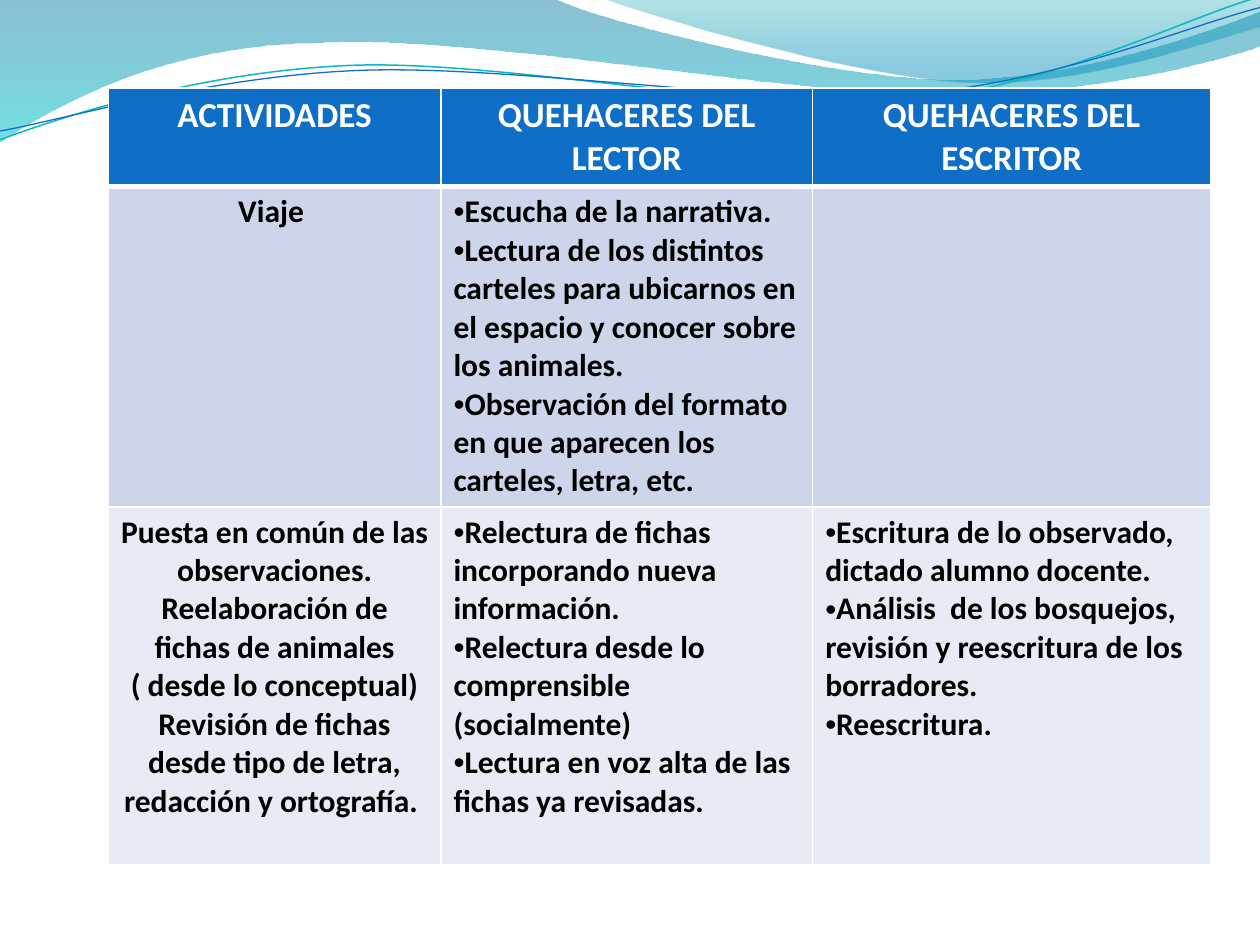
import pptx
import pptx.util
import pptx.dml.color
import pptx.enum.text
import pptx.oxml.ns
from lxml import etree

Inches = pptx.util.Inches
Pt = pptx.util.Pt
RGBColor = pptx.dml.color.RGBColor
qn = pptx.oxml.ns.qn

WHITE = RGBColor(0xFF, 0xFF, 0xFF)
BLACK = RGBColor(0, 0, 0)
BLUE = RGBColor(0x0F, 0x6F, 0xC6)
TEAL = RGBColor(0x0A, 0xB8, 0xBF)
DEEP_BLUE = RGBColor(0x00, 0x74, 0xA1)
CYAN = RGBColor(0x00, 0xC6, 0xCF)
SEA_GREEN = RGBColor(0x00, 0xA1, 0xA9)
SKY_BLUE = RGBColor(0x00, 0x8B, 0xBF)
BAND_DARK = RGBColor(0xCC, 0xD5, 0xEA)
BAND_LIGHT = RGBColor(0xE7, 0xEB, 0xF5)

BROAD_WAVE = [
    (0, -0.01), (4.4, -0.01),
    (4.76, 0.17, 6.64, 0.63, 7.58, 0.63),
    (8.53, 0.63, 9.58, 0.26, 10, 0.09),
    (10.01, 0.36),
    (9.83, 0.44, 8.7, 0.76, 7.46, 0.75),
    (6.22, 0.75, 3.82, 0.28, 2.57, 0.34),
    (1.29, 0.35, 0.46, 0.83, -0.01, 1.13),
]
RIGHT_WAVE = [
    (4.79, -0.01),
    (5.09, 0.11, 6.82, 0.62, 7.69, 0.65),
    (8.56, 0.69, 9.61, 0.32, 10, 0.21),
    (10, 0),
]
TEAL_STRAND = [
    (0, 1.11),
    (0.48, 0.93, 1.58, 0.57, 2.77, 0.52),
    (3.95, 0.47, 5.93, 0.89, 7.13, 0.8),
    (8.33, 0.71, 9.38, 0.15, 9.98, -0.02),
]
BLUE_STRAND = [
    (0, 1.04),
    (0.47, 0.96, 1.64, 0.61, 2.83, 0.56),
    (4.03, 0.51, 5.97, 0.83, 7.17, 0.75),
    (8.36, 0.67, 9.41, 0.21, 10, 0.06),
]

HEADINGS = ["ACTIVIDADES", "QUEHACERES DEL LECTOR", "QUEHACERES DEL ESCRITOR"]
ACTIVITIES = [
    [
        ["Viaje "],
        [
            "Escucha de la narrativa.",
            "Lectura de los distintos carteles para ubicarnos en el espacio y conocer sobre los animales.",
            "Observación del formato en que aparecen los carteles, letra, etc.",
        ],
        [],
    ],
    [
        [
            "Puesta en común de las observaciones.",
            "Reelaboración de fichas de animales ( desde lo conceptual)",
            "Revisión de fichas desde tipo de letra, redacción y ortografía. ",
        ],
        [
            "Relectura de fichas incorporando nueva información.",
            "Relectura desde lo comprensible (socialmente)",
            "Lectura en voz alta de las fichas ya revisadas.",
        ],
        [
            "Escritura de lo observado, dictado alumno docente.",
            "Análisis  de los bosquejos, revisión y reescritura de los borradores.",
            "Reescritura.",
        ],
    ],
]


class SlideBuilder:
    font = "Calibri"

    def __init__(self, slide):
        self.slide = slide

    def outline(self, segments, closed):
        anchors = [(Inches(s[-2]), Inches(s[-1])) for s in segments]
        builder = self.slide.shapes.build_freeform(*anchors[0], scale=1.0)
        builder.add_line_segments(anchors[1:], close=closed)
        shape = builder.convert_to_shape()
        shape.shadow.inherit = False
        left, top = builder.shape_offset_x, builder.shape_offset_y
        lines = list(shape._element.spPr.iter(qn("a:lnTo")))
        for line, segment in zip(lines, segments[1:]):
            if len(segment) == 6:
                curve = etree.Element(qn("a:cubicBezTo"))
                for x, y in zip(segment[::2], segment[1::2]):
                    etree.SubElement(curve, qn("a:pt"),
                                     x=str(Inches(x) - left), y=str(Inches(y) - top))
                line.getparent().replace(line, curve)
        return shape

    def wave(self, segments, stops):
        wave = self.outline(segments, True)
        wave.line.fill.background()
        wave.fill.gradient()
        wave.fill.gradient_angle = 270
        for stop, (position, color, _) in zip(wave.fill.gradient_stops, stops):
            stop.position = position
            stop.color.rgb = color
        colors = wave._element.spPr.iter(qn("a:srgbClr"))
        for color_element, (_, _, opacity) in zip(colors, stops):
            etree.SubElement(color_element, qn("a:alpha"), val=str(opacity * 1000))

    def strand(self, segments, color, width):
        strand = self.outline(segments, False)
        strand.fill.background()
        strand.line.color.rgb = color
        strand.line.width = Pt(width)

    def table(self, left, top, widths, heights):
        table = self.slide.shapes.add_table(
            len(heights), len(widths), Inches(left), Inches(top),
            Inches(sum(widths)), Inches(sum(heights))).table
        for column, width in zip(table.columns, widths):
            column.width = Inches(width)
        for row, height in zip(table.rows, heights):
            row.height = Inches(height)
        return table

    def border(self, side, width):
        line = etree.Element(qn("a:" + side), w=str(Pt(width)))
        fill = etree.SubElement(line, qn("a:solidFill"))
        etree.SubElement(fill, qn("a:srgbClr"), val=str(WHITE))
        return line

    def cell(self, cell, lines, fill, color, size, bulleted=False, top=1, bottom=1):
        cell.fill.solid()
        cell.fill.fore_color.rgb = fill
        sides = [("lnL", 1), ("lnR", 1), ("lnT", top), ("lnB", bottom)]
        for place, (side, width) in enumerate(sides):
            cell._tc.tcPr.insert(place, self.border(side, width))
        cell.text_frame.text = "\n".join(lines)
        for paragraph in cell.text_frame.paragraphs:
            if bulleted and lines:
                properties = paragraph._p.get_or_add_pPr()
                properties.set("marL", "0")
                properties.set("indent", "0")
                etree.SubElement(properties, qn("a:buFont"), typeface="Arial")
                etree.SubElement(properties, qn("a:buChar"), char="•")
            elif not bulleted:
                paragraph.alignment = pptx.enum.text.PP_ALIGN.CENTER
            for run in paragraph.runs:
                run.font.name = self.font
                run.font.size = Pt(size)
                run.font.bold = True
                run.font.color.rgb = color


def main():
    presentation = pptx.Presentation()
    presentation.slide_width = Inches(10)
    presentation.slide_height = Inches(7.5)
    builder = SlideBuilder(presentation.slides.add_slide(presentation.slide_layouts[6]))

    builder.wave(BROAD_WAVE, [(0, DEEP_BLUE, 45), (1, CYAN, 55)])
    builder.wave(RIGHT_WAVE, [(0, SEA_GREEN, 30), (0.8, SKY_BLUE, 45)])
    builder.strand(TEAL_STRAND, TEAL, 0.85)
    builder.strand(BLUE_STRAND, BLUE, 0.75)

    plan = builder.table(0.86, 0.7, [2.64, 2.95, 3.16], [0.77, 2.54, 2.84])
    for column, heading in enumerate(HEADINGS):
        builder.cell(plan.cell(0, column), [heading], BLUE, WHITE, 20, bottom=3)
    for row, (activity, band) in enumerate(zip(ACTIVITIES, [BAND_DARK, BAND_LIGHT]), 1):
        for column, lines in enumerate(activity):
            builder.cell(plan.cell(row, column), lines, band, BLACK, 18,
                         bulleted=column > 0, top=3 if row == 1 else 1)

    presentation.save("out.pptx")


if __name__ == "__main__":
    main()
